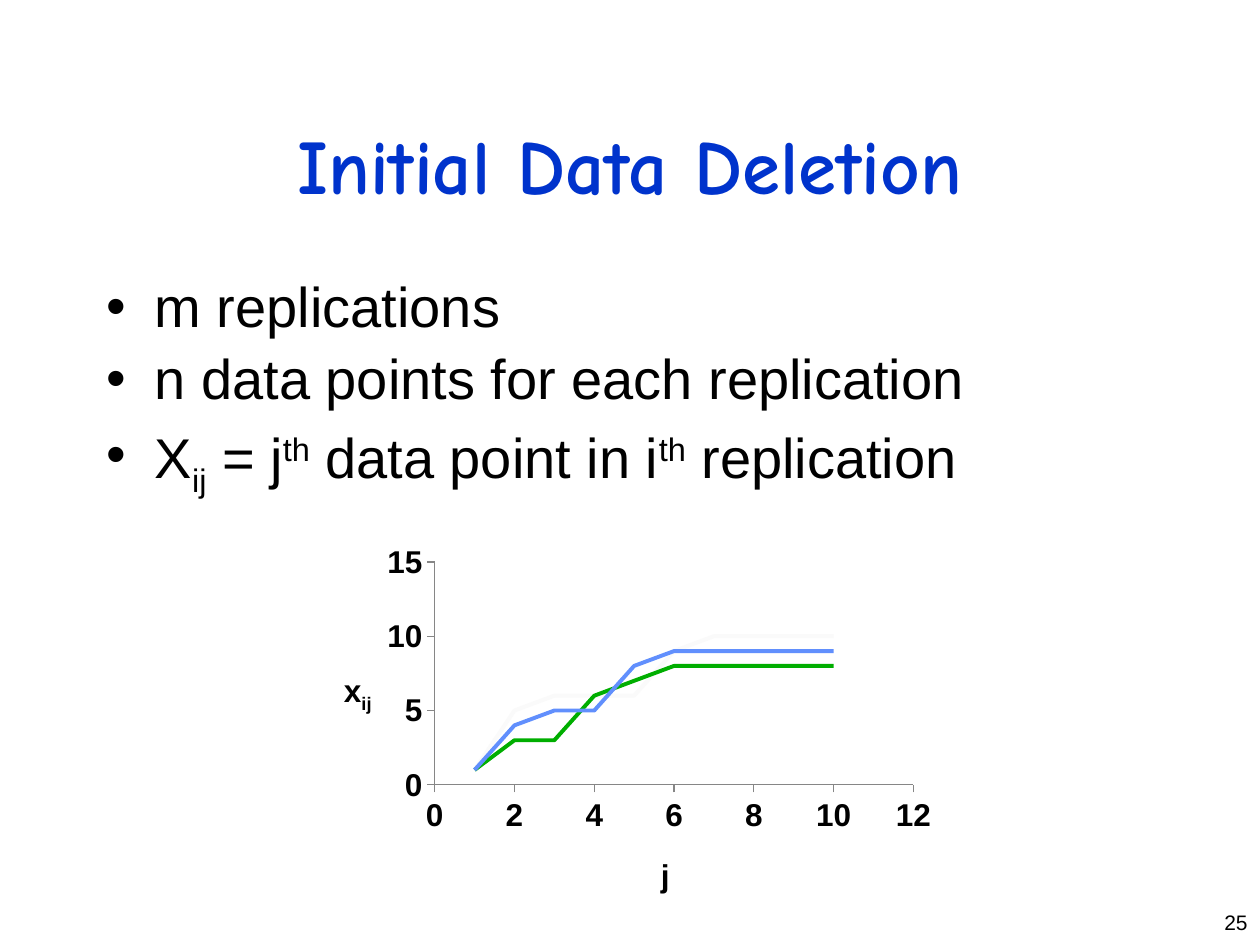
from pptx import Presentation
from pptx.chart.data import XyChartData
from pptx.dml.color import RGBColor
from pptx.enum.chart import XL_CHART_TYPE as ChartType, XL_TICK_MARK as Tick
from pptx.enum.text import MSO_ANCHOR as Anchor, PP_ALIGN as Align
from pptx.oxml.ns import qn
from pptx.util import Inches, Pt
from lxml.etree import SubElement, Element

BULLETS = [
    [("m replications", 0)],
    [("n data points for each replication", 0)],
    [("X", 0), ("ij", -25), (" = j", 0), ("th", 30),
     (" data point in i", 0), ("th", 30), (" replication", 0)],
]
REPLICATIONS = [
    ("Series 1", "618FFD", [1, 4, 5, 5, 8, 9, 9, 9, 9, 9]),
    ("Series 2", "00AE00", [1, 3, 3, 6, 7, 8, 8, 8, 8, 8]),
    ("Series 3", "FAFAFA", [1, 5, 6, 6, 6, 9, 10, 10, 10, 10]),
]


def rgb(value):
    return RGBColor.from_string(value)


def style_font(font, size, color="000000", name="Arial", bold=False):
    font.size, font.name, font.bold = Pt(size), name, bold
    font.color.rgb = rgb(color)


def add_runs(p, parts, size, bold=False):
    for text, baseline in parts:
        r = p.add_run()
        r.text = text
        style_font(r.font, size, bold=bold)
        if baseline:
            r.font._element.set("baseline", str(baseline * 1000))


def add_text_box(slide, box, anchor=Anchor.TOP):
    tf = slide.shapes.add_textbox(*map(Inches, box)).text_frame
    tf.word_wrap = True
    tf.vertical_anchor = anchor
    return tf


def add_line(slide, box, text, align, anchor=Anchor.TOP, **font):
    p = add_text_box(slide, box, anchor).paragraphs[0]
    p.text = text
    p.alignment = align
    style_font(p.runs[0].font, **font)


def format_bullet(p):
    p.line_spacing = 0.9
    pPr = p._p.get_or_add_pPr()
    pPr.set("marL", str(Inches(0.38)))
    pPr.set("indent", str(Inches(-0.38)))
    before = SubElement(pPr, qn("a:spcBef"))
    SubElement(before, qn("a:spcPct")).set("val", "20000")
    SubElement(pPr, qn("a:buFont")).set("typeface", "Arial")
    SubElement(pPr, qn("a:buChar")).set("char", "•")


def add_bullets(slide, box, items):
    tf = add_text_box(slide, box)
    for i, parts in enumerate(items):
        p = tf.add_paragraph() if i else tf.paragraphs[0]
        format_bullet(p)
        add_runs(p, parts, 32)


def place(parent, index, **position):
    layout = parent.find(qn("c:layout"))
    if layout is None:
        layout = Element(qn("c:layout"))
        parent.insert(index, layout)
    manual = SubElement(layout, qn("c:manualLayout"))
    if "w" in position:
        SubElement(manual, qn("c:layoutTarget")).set("val", "inner")
    for axis in "xy":
        SubElement(manual, qn(f"c:{axis}Mode")).set("val", "edge")
    for key, value in position.items():
        SubElement(manual, qn(f"c:{key}")).set("val", str(value))


def format_axis(axis, maximum, step, title, x, y):
    axis.minimum_scale, axis.maximum_scale, axis.major_unit = 0, maximum, step
    axis.has_major_gridlines = False
    axis.major_tick_mark, axis.minor_tick_mark = Tick.OUTSIDE, Tick.NONE
    axis.format.line.color.rgb = rgb("868686")
    axis.format.line.width = Pt(0.75)
    style_font(axis.tick_labels.font, 18, bold=True)
    tf = axis.axis_title.text_frame
    add_runs(tf.paragraphs[0], title, 18, bold=True)
    tf._txBody.find(qn("a:bodyPr")).set("rot", "0")
    tf._txBody.find(qn("a:bodyPr")).set("vert", "horz")
    place(axis.axis_title._element, 1, x=x, y=y)


def add_replication_chart(slide, box):
    data = XyChartData()
    for name, _, values in REPLICATIONS:
        series = data.add_series(name)
        for j, value in enumerate(values, 1):
            series.add_data_point(j, value)
    chart = slide.shapes.add_chart(
        ChartType.XY_SCATTER_LINES_NO_MARKERS, *map(Inches, box), data).chart
    chart.has_legend = chart.has_title = False
    style_font(chart.font, 18, bold=True)
    plot = chart.plots[0]
    plot.vary_by_categories = False
    for series, (_, color, _) in zip(plot.series, REPLICATIONS):
        series.smooth = False
        series.format.line.color.rgb = rgb(color)
        series.format.line.width = Pt(2.25)
    format_axis(chart.category_axis, 12, 2, [("j", 0)], 0.54, 0.83)
    format_axis(chart.value_axis, 15, 5, [("x", 0), ("ij", -25)], 0.04, 0.35)
    plot_area = chart._chartSpace.chart.plotArea
    place(plot_area, 0, x=0.19, y=0.07, w=0.76, h=0.59)


def main():
    prs = Presentation()
    prs.slide_width, prs.slide_height = Inches(10), Inches(7.5)
    slide = prs.slides.add_slide(prs.slide_layouts[6])
    add_line(slide, (0.75, 0.67, 8.5, 1.25), "Initial Data Deletion",
             Align.CENTER, Anchor.MIDDLE,
             size=44, color="0033CC", name="Comic Neue", bold=True)
    add_bullets(slide, (0.75, 2.17, 8.5, 4.5), BULLETS)
    add_line(slide, (9.25, 7.17, 0.75, 0.33), "25", Align.RIGHT, size=12)
    add_replication_chart(slide, (2.5, 4.25, 5, 3))
    prs.save("out.pptx")


if __name__ == "__main__":
    main()
